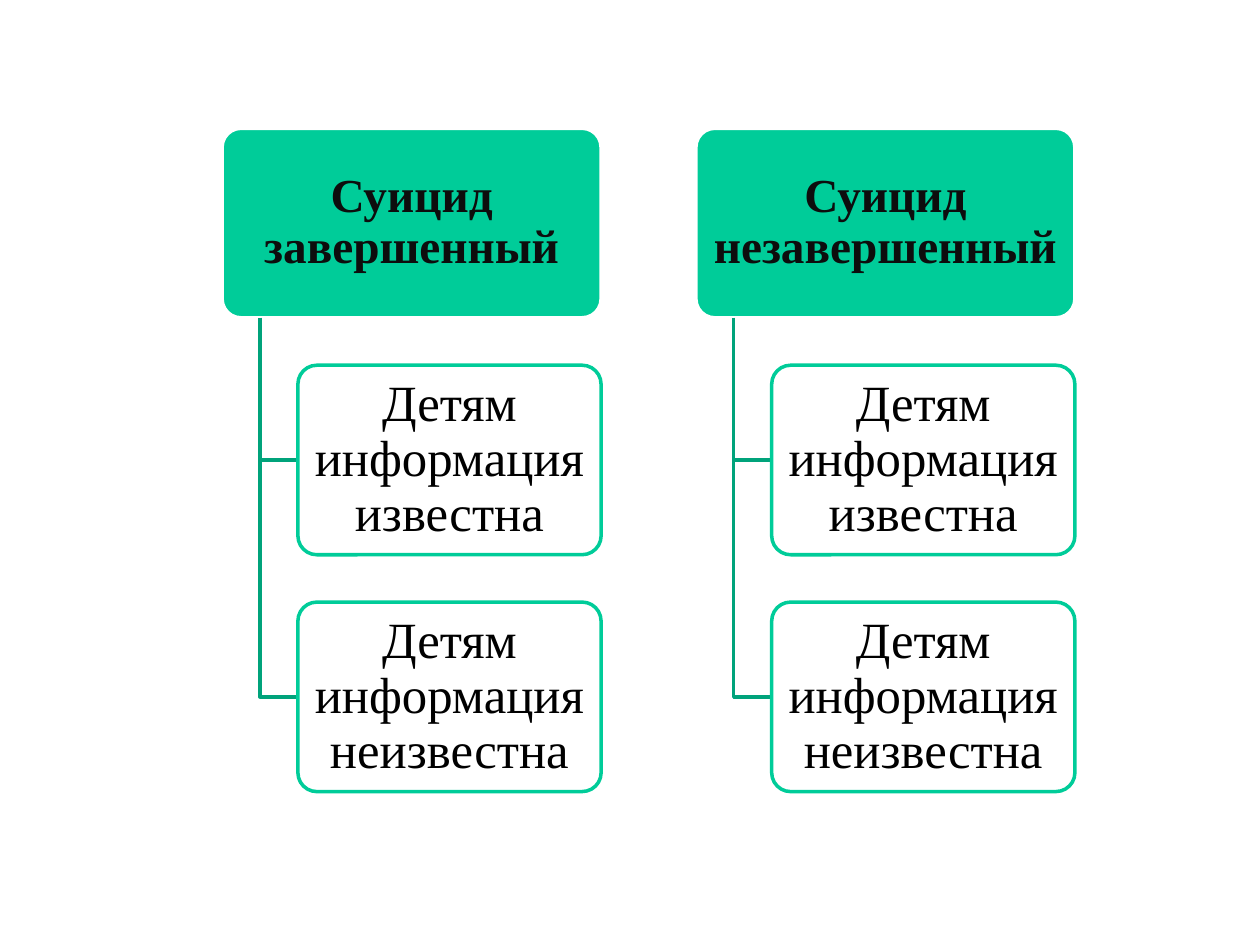
from lxml import etree
from pptx import Presentation
from pptx.dml.color import RGBColor
from pptx.enum import shapes, text
from pptx.oxml import ns
from pptx.util import Pt

# Content: a heading and its branches
GROUPS = [
    ("Суицид завершенный",
     ["Детям информация известна", "Детям информация неизвестна"]),
    ("Суицид незавершенный",
     ["Детям информация известна", "Детям информация неизвестна"]),
]

# Layout in points
LEFT, TOP = 126.9, 73.3
HEAD_WIDTH, HEIGHT = 216.6, 108.3
COLUMN_STEP = HEAD_WIDTH * 1.25
ROW_STEP = HEIGHT * 1.25
INDENT = HEAD_WIDTH * 0.2
TRUNK = INDENT / 2

GREEN, DARK_GREEN = "00CC99", "00A37B"
WHITE, BLACK, NEAR_BLACK = "FFFFFF", "000000", "0D0D0D"


def color(value):
    return RGBColor.from_string(value)


def set_line(shape, value):
    shape.shadow.inherit = False
    shape.line.color.rgb = color(value)
    shape.line.width = Pt(2)


def add_card(page, left, top, width, words, fill, line, ink, size, bold=False, alpha=None):
    card = page.shapes.add_shape(
        shapes.MSO_SHAPE.ROUNDED_RECTANGLE, Pt(left), Pt(top), Pt(width), Pt(HEIGHT))
    card.adjustments[0] = 0.1
    card.fill.solid()
    card.fill.fore_color.rgb = color(fill)
    set_line(card, line)
    if alpha:
        tint = card._element.spPr.find(ns.qn("a:solidFill"))[0]
        etree.SubElement(tint, ns.qn("a:alpha"), val=str(alpha * 1000))

    frame = card.text_frame
    frame.word_wrap = True
    frame.vertical_anchor = text.MSO_ANCHOR.MIDDLE
    frame.margin_left = frame.margin_right = Pt(4.3)
    frame.margin_top = frame.margin_bottom = Pt(2.9)
    frame.text = words
    para = frame.paragraphs[0]
    para.alignment = text.PP_ALIGN.CENTER
    para.line_spacing = 0.9
    font = para.runs[0].font
    font.name, font.size, font.bold = "Times New Roman", Pt(size), bold
    font.color.rgb = color(ink)


def add_elbow(page, x, y, end_x, end_y):
    builder = page.shapes.build_freeform(Pt(x), Pt(y))
    builder.add_line_segments([(Pt(x), Pt(end_y)), (Pt(end_x), Pt(end_y))], close=False)
    elbow = builder.convert_to_shape()
    elbow.fill.background()
    set_line(elbow, DARK_GREEN)


deck = Presentation()
deck.slide_width, deck.slide_height = Pt(720), Pt(540)
page = deck.slides.add_slide(deck.slide_layouts[6])

# Each group: heading card, then elbows leading to its branches
for column, (heading, branches) in enumerate(GROUPS):
    left = LEFT + column * COLUMN_STEP
    add_card(page, left, TOP, HEAD_WIDTH, heading, GREEN, WHITE, NEAR_BLACK, 27, bold=True)
    for row, branch in enumerate(branches, 1):
        top = TOP + row * ROW_STEP
        add_elbow(page, left + TRUNK, TOP + HEIGHT, left + INDENT, top + HEIGHT / 2)
        add_card(page, left + INDENT, top, HEAD_WIDTH - INDENT, branch,
                 WHITE, GREEN, BLACK, 29, alpha=90)

deck.save("out.pptx")
